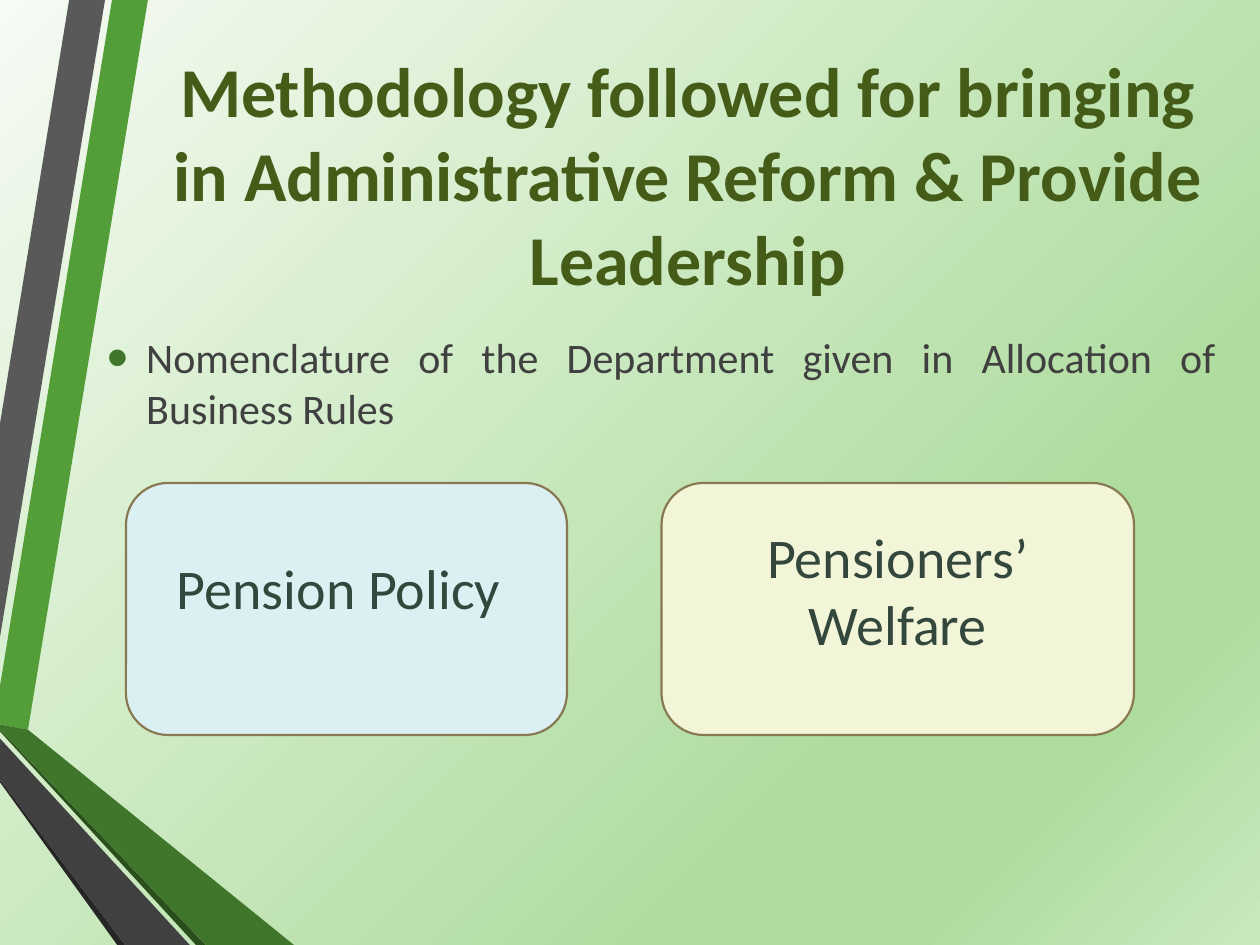
from lxml import etree
from pptx import Presentation
from pptx import util as u
from pptx.dml.color import RGBColor
from pptx.enum import shapes, text
from pptx.oxml.ns import qn

FONT = "Calibri"
TITLE_GREEN = RGBColor(0x45, 0x5C, 0x19)
BODY_GRAY = RGBColor(0x40, 0x40, 0x40)
BULLET_GREEN = RGBColor(0x3F, 0x76, 0x2B)
CARD_TEXT = RGBColor(0x34, 0x47, 0x3D)
CARD_LINE = RGBColor(0x88, 0x79, 0x52)
BLUE_TINT = RGBColor(0xDB, 0xF0, 0xF3)
CREAM = RGBColor(0xF2, 0xF5, 0xD8)
BAND_GREEN = RGBColor(0x54, 0x9E, 0x39)
BAND_GRAY = RGBColor(0x59, 0x59, 0x59)
EDGE_BLACK = RGBColor(0x26, 0x26, 0x26)
EDGE_GREEN = RGBColor(0x2A, 0x4F, 0x1C)

# Content
TITLE = "Methodology followed for bringing in Administrative Reform & Provide Leadership"
BULLET = "Nomenclature of the Department given in Allocation of Business Rules"
# label, left, width, fill, right inset, bottom inset
CARDS = [
    ("Pension Policy", 72, 252, BLUE_TINT, 16, 28),
    ("Pensioners’ Welfare", 378, 270, CREAM, 7.2, 25.6),
]
CARD_TOP, CARD_HEIGHT = 276, 144

# Background stops: percent along the diagonal, colour
BACKGROUND = [
    (0, "F6FBF4"), (17, "E6F4E0"), (29, "D9EFD1"), (44, "CBE9C0"), (50, "C5E6B9"),
    (61, "BAE1AC"), (74, "AEDC9D"), (83, "AEDC9D"), (100, "C9E8BE"),
]

# Ribbon pieces, back to front: colour, corners
RIBBON = [
    (BAND_GREEN, [(0, 392), (0, 414), (16, 417), (84.5, 0), (64, 0)]),
    (BAND_GRAY, [(60, 0), (39.5, 0), (0, 242), (0, 364)]),
    (EDGE_BLACK, [(0, 445.5), (0, 447), (67, 540), (71.5, 540)]),
    (EDGE_GREEN, [(0, 417), (0, 418), (112, 540), (117.5, 540)]),
    (BULLET_GREEN, [(0, 417), (117.5, 540), (168, 540), (16, 417), (0, 414)]),
    (BODY_GRAY, [(0, 445.5), (71.5, 540), (108.5, 540), (0, 422)]),
]


def write(frame, words, size, color, align, bold=False):
    frame.word_wrap = True
    paragraph = frame.paragraphs[0]
    paragraph.alignment = align
    run = paragraph.add_run()
    run.text = words
    run.font.name = FONT
    run.font.size = u.Pt(size)
    run.font.bold = bold
    run.font.color.rgb = color
    return paragraph


def add_text_box(slide, left, top, width, height):
    return slide.shapes.add_textbox(*map(u.Pt, (left, top, width, height))).text_frame


def add_bullet(paragraph, indent):
    props = paragraph._p.get_or_add_pPr()
    props.set("marL", str(u.Pt(indent)))
    props.set("indent", str(-u.Pt(indent)))
    color = etree.SubElement(props, qn("a:buClr"))
    etree.SubElement(color, qn("a:srgbClr"), val=str(BULLET_GREEN))
    etree.SubElement(props, qn("a:buSzPct"), val="145000")
    etree.SubElement(props, qn("a:buFont"), typeface="Arial")
    etree.SubElement(props, qn("a:buChar"), char="•")


def paint_background(slide):
    fill = slide.background.fill
    fill.gradient()
    fill.gradient_angle = 315  # counter-clockwise: top left to bottom right
    stops = slide._element.find(".//" + qn("a:gsLst"))
    for stop in list(stops):
        stops.remove(stop)
    for percent, color in BACKGROUND:
        stop = etree.SubElement(stops, qn("a:gs"), pos=str(percent * 1000))
        etree.SubElement(stop, qn("a:srgbClr"), val=color)


def add_ribbon_piece(slide, color, corners):
    start, *rest = [(u.Pt(x), u.Pt(y)) for x, y in corners]
    builder = slide.shapes.build_freeform(*start)
    builder.add_line_segments(rest, close=True)
    piece = builder.convert_to_shape()
    piece.shadow.inherit = False
    piece.fill.solid()
    piece.fill.fore_color.rgb = color
    piece.line.fill.background()


def add_card(slide, label, left, width, fill, right_inset, bottom_inset):
    card = slide.shapes.add_shape(
        shapes.MSO_SHAPE.ROUNDED_RECTANGLE,
        u.Pt(left), u.Pt(CARD_TOP), u.Pt(width), u.Pt(CARD_HEIGHT))
    card.shadow.inherit = False
    card.fill.solid()
    card.fill.fore_color.rgb = fill
    card.line.color.rgb = CARD_LINE
    card.line.width = u.Pt(1.25)
    frame = card.text_frame
    frame.vertical_anchor = text.MSO_ANCHOR.MIDDLE
    frame.margin_right = u.Pt(right_inset)
    frame.margin_bottom = u.Pt(bottom_inset)
    write(frame, label, 32, CARD_TEXT, text.PP_ALIGN.CENTER)


def main():
    deck = Presentation()
    deck.slide_width, deck.slide_height = u.Pt(720), u.Pt(540)
    slide = deck.slides.add_slide(deck.slide_layouts[6])
    paint_background(slide)

    # Folded ribbon on the left
    for color, corners in RIBBON:
        add_ribbon_piece(slide, color, corners)

    # Title
    title = add_text_box(slide, 84, 24, 618, 150)
    title.vertical_anchor = text.MSO_ANCHOR.MIDDLE
    write(title, TITLE, 40, TITLE_GREEN, text.PP_ALIGN.CENTER, bold=True)

    # Bullet line
    body = add_text_box(slide, 54, 186, 648, 84)
    bullet = write(body, BULLET, 24, BODY_GRAY, text.PP_ALIGN.JUSTIFY)
    bullet.space_after = u.Pt(6)
    add_bullet(bullet, 22.5)

    # Two topic cards
    for card in CARDS:
        add_card(slide, *card)

    deck.save("out.pptx")


if __name__ == "__main__":
    main()
